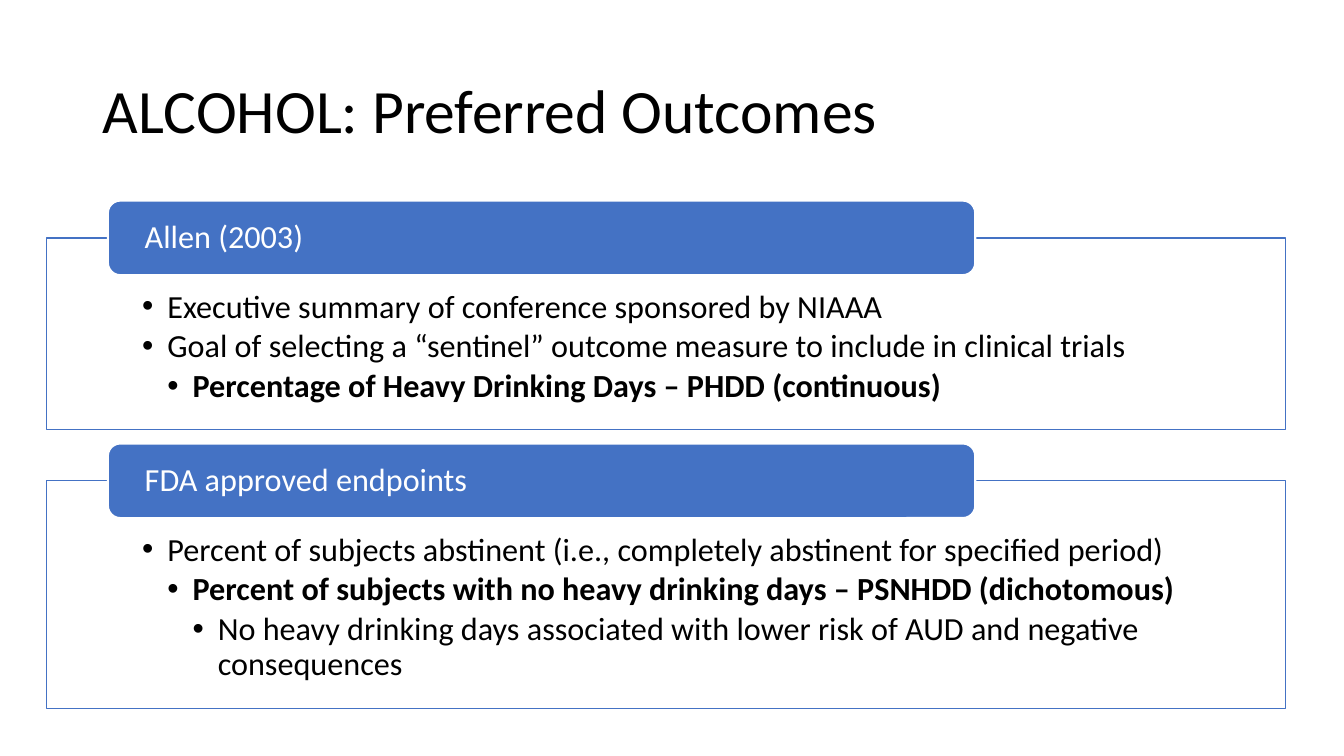
from dataclasses import dataclass

from lxml import etree
from pptx import Presentation
from pptx.dml.color import RGBColor
from pptx.enum.shapes import MSO_SHAPE
from pptx.enum.text import MSO_ANCHOR, MSO_AUTO_SIZE, PP_ALIGN
from pptx.oxml.ns import qn
from pptx.util import Inches, Pt

RECT, ROUND = MSO_SHAPE.RECTANGLE, MSO_SHAPE.ROUNDED_RECTANGLE
TOP, MIDDLE = MSO_ANCHOR.TOP, MSO_ANCHOR.MIDDLE
LEFT = PP_ALIGN.LEFT
NO_FIT = MSO_AUTO_SIZE.NONE


@dataclass(frozen=True)
class Theme:
    font: str = "Calibri"
    ink: RGBColor = RGBColor(0, 0, 0)
    paper: RGBColor = RGBColor(255, 255, 255)
    accent: RGBColor = RGBColor(0x44, 0x72, 0xC4)
    title: int = 44
    body: int = 23
    spacing: float = 0.9


THEME = Theme()
STEP = 0.25  # indent per bullet level

# Each panel: top, height, label, points as (level, bold, text)
PANELS = [
    (2.36, 1.9, "Allen (2003)", [
        (1, False, "Executive summary of conference sponsored by NIAAA"),
        (1, False, "Goal of selecting a “sentinel” outcome measure to include in clinical trials"),
        (2, True, "Percentage of Heavy Drinking Days – PHDD (continuous)"),
    ]),
    (4.77, 2.26, "FDA approved endpoints", [
        (1, False, "Percent of subjects abstinent (i.e., completely abstinent for specified period)"),
        (2, True, "Percent of subjects with no heavy drinking days – PSNHDD (dichotomous)"),
        (3, False, "No heavy drinking days associated with lower risk of AUD and negative consequences"),
    ]),
]


def add_text(para, text, size, color, bold=False):
    para.alignment = LEFT
    para.line_spacing = THEME.spacing
    run = para.add_run()
    run.text = text
    font = run.font
    font.name, font.size, font.bold = THEME.font, Pt(size), bold
    font.color.rgb = color


def add_box(slide, kind, box, fill, line, width):
    shape = slide.shapes.add_shape(kind, *map(Inches, box))
    shape.shadow.inherit = False
    shape.fill.solid()
    shape.fill.fore_color.rgb = fill
    shape.line.color.rgb = line
    shape.line.width = Pt(width)
    return shape


def set_frame(frame, anchor, side, top=0, bottom=0):
    frame.word_wrap = True
    frame.vertical_anchor = anchor
    frame.margin_left = frame.margin_right = Inches(side)
    frame.margin_top, frame.margin_bottom = Inches(top), Inches(bottom)


def add_bullet(para, level):
    para.level = level
    props = para._p.get_or_add_pPr()
    props.set("marL", str(Inches(STEP * level)))
    props.set("indent", str(-Inches(STEP)))
    etree.SubElement(props, qn("a:buFont")).set("typeface", "Arial")
    etree.SubElement(props, qn("a:buChar")).set("char", "•")


def add_title(slide, box, text):
    title = slide.shapes.title
    title.left, title.top, title.width, title.height = map(Inches, box)
    frame = title.text_frame
    frame.auto_size = NO_FIT
    set_frame(frame, MIDDLE, 0.1, 0.05, 0.05)
    add_text(frame.paragraphs[0], text, THEME.title, THEME.ink)


def add_panel(slide, box, label, points):
    """Draw a bordered list with a label tab across its top edge."""
    left, top, width, height = box
    body = add_box(slide, RECT, box, THEME.paper, THEME.accent, 1)
    tint = body.fill._xPr.find(qn("a:solidFill"))[0]
    etree.SubElement(tint, qn("a:alpha")).set("val", "90000")
    frame = body.text_frame
    set_frame(frame, TOP, 0.95, 0.52, 0.18)
    for i, (level, bold, text) in enumerate(points):
        para = frame.add_paragraph() if i else frame.paragraphs[0]
        add_text(para, text, THEME.body, THEME.ink, bold)
        para.space_after = Pt(THEME.body * 0.15)
        add_bullet(para, level)

    tab_box = (left + 0.61, top - 0.37, width * 0.7, 0.74)
    tab = add_box(slide, ROUND, tab_box, THEME.accent, THEME.paper, 1.5)
    set_frame(tab.text_frame, MIDDLE, 0.33)
    add_text(tab.text_frame.paragraphs[0], label, THEME.body, THEME.paper)


def main():
    deck = Presentation()
    deck.slide_width, deck.slide_height = Inches(13.33), Inches(7.5)
    slide = deck.slides.add_slide(deck.slide_layouts[5])
    add_title(slide, (0.92, 0.4, 11.5, 1.45), "ALCOHOL: Preferred Outcomes")
    for top, height, label, points in PANELS:
        add_panel(slide, (0.46, top, 12.29, height), label, points)
    deck.save("out.pptx")


if __name__ == "__main__":
    main()
